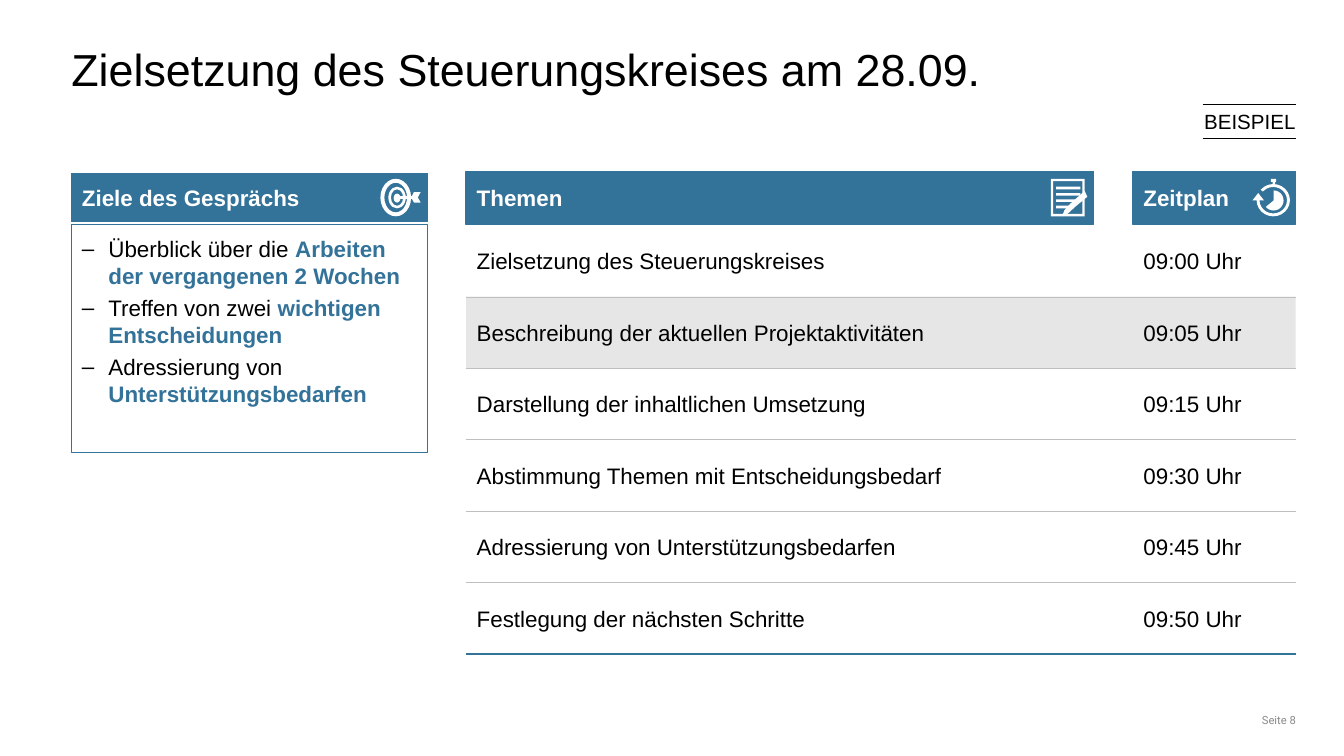
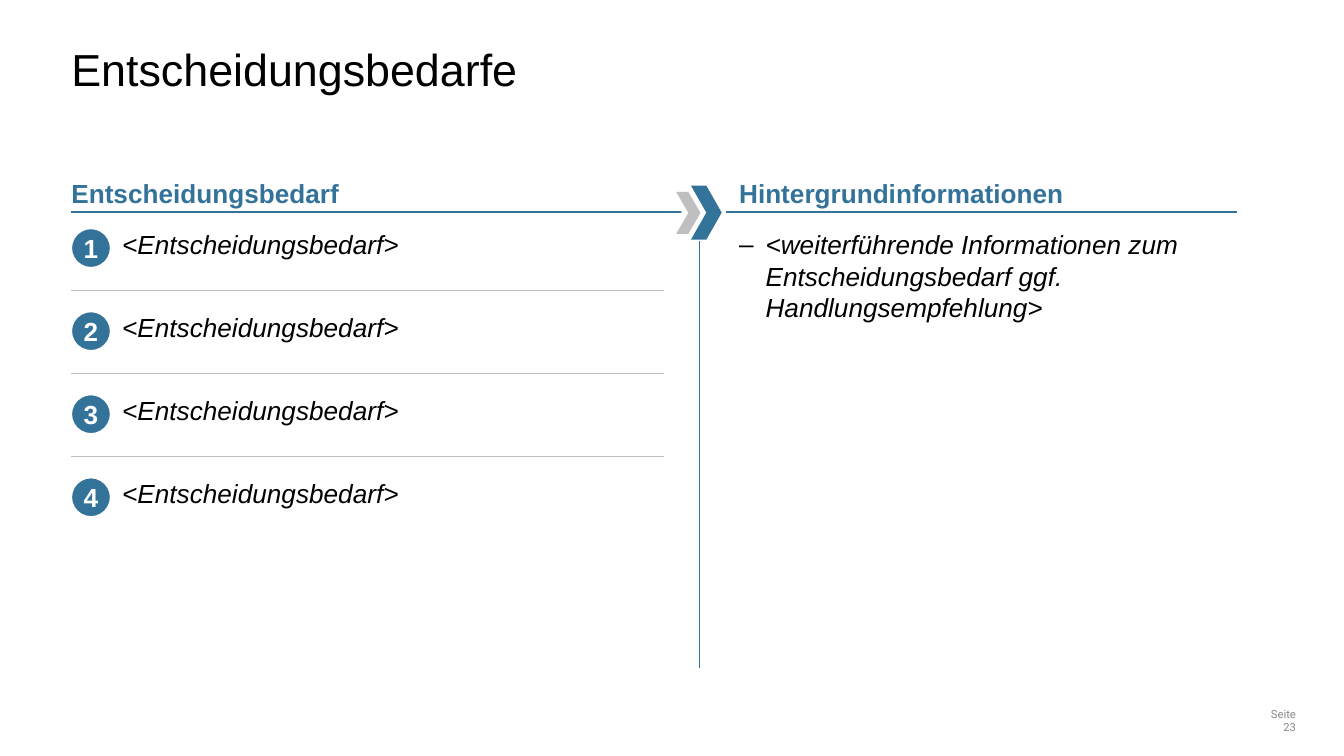
import dataclasses

import lxml.etree
import pptx
import pptx.dml.color
import pptx.enum.shapes
import pptx.enum.text
import pptx.oxml.ns
import pptx.util

Cm = pptx.util.Cm
Pt = pptx.util.Pt
RGB = pptx.dml.color.RGBColor.from_string
SHAPE = pptx.enum.shapes.MSO_SHAPE
ANCHOR = pptx.enum.text.MSO_ANCHOR
ALIGN = pptx.enum.text.PP_ALIGN
qn = pptx.oxml.ns.qn


@dataclasses.dataclass(frozen=True)
class Theme:
    accent: str = "337299"
    black: str = "000000"
    white: str = "FFFFFF"
    rule: str = "BFBFBF"
    band: str = "E6E6E6"
    footer: str = "898989"
    font: str = "Arial"
    footer_font: str = "Roboto"
    title_size: float = 24
    large_size: float = 14
    body_size: float = 12
    tag_size: float = 11
    footer_size: float = 6
    thin: float = 0.25
    medium: float = 0.75


theme = Theme()
LEFT, RIGHT = 1.35, 24.49


def add_box(page, kind, left, top, width, height, text="", fill=None, line=None,
            size=theme.body_size, color=theme.black, bold=False, italic=False,
            font=theme.font, align=ALIGN.LEFT, anchor=ANCHOR.TOP,
            insets=(0, 0), wrap=True, bullet_gap=None):
    """Add a text box (kind None) or a preset shape, with its text."""
    area = Cm(left), Cm(top), Cm(width), Cm(height)
    if kind is None:
        box = page.shapes.add_textbox(*area)
    else:
        box = page.shapes.add_shape(kind, *area)
        box.shadow.inherit = False
        if fill:
            box.fill.solid()
            box.fill.fore_color.rgb = RGB(fill)
        else:
            box.fill.background()
        if line:
            box.line.color.rgb = RGB(line)
            box.line.width = Pt(theme.medium)
        else:
            box.line.fill.background()
    if not text:
        return box

    frame = box.text_frame
    frame.word_wrap = wrap
    frame.vertical_anchor = anchor
    frame.margin_left = frame.margin_right = Cm(insets[0])
    frame.margin_top = frame.margin_bottom = Cm(insets[1])
    frame.text = text
    for index, para in enumerate(frame.paragraphs):
        para.alignment = align
        if bullet_gap is not None:
            properties = para._p.get_or_add_pPr()
            properties.set("marL", str(Cm(0.5)))
            properties.set("indent", str(-Cm(0.5)))
            tint = lxml.etree.SubElement(properties, qn("a:buClr"))
            lxml.etree.SubElement(tint, qn("a:srgbClr"), val=theme.black)
            lxml.etree.SubElement(properties, qn("a:buFont"), typeface=theme.font)
            lxml.etree.SubElement(properties, qn("a:buChar"), char="–")
            if index:
                para.space_before = Pt(bullet_gap)
        for span in para.runs:
            span.font.name = font
            span.font.size = Pt(size)
            span.font.bold = bold
            span.font.italic = italic
            span.font.color.rgb = RGB(color)
    return box


def add_line(page, x1, y1, x2, y2, color, width):
    line = page.shapes.add_connector(
        pptx.enum.shapes.MSO_CONNECTOR.STRAIGHT, Cm(x1), Cm(y1), Cm(x2), Cm(y2))
    line.line.color.rgb = RGB(color)
    line.line.width = Pt(width)
    lxml.etree.SubElement(line._element.spPr, qn("a:effectLst"))


deck = pptx.Presentation()
deck.slide_width, deck.slide_height = Cm(25.4), Cm(14.29)

# Title and page number on every slide
pages = []
for title, number in (("Zielsetzung des Steuerungskreises am 28.09.", 8),
                      ("Entscheidungsbedarfe", 23)):
    page = deck.slides.add_slide(deck.slide_layouts[6])
    add_box(page, None, LEFT, 0.79, RIGHT - LEFT, 1.02, title,
            size=theme.title_size, anchor=ANCHOR.BOTTOM)
    add_box(page, None, RIGHT - 0.73, 13.49, 0.73, 0.25, f"Seite {number}",
            size=theme.footer_size, color=theme.footer, font=theme.footer_font,
            align=ALIGN.RIGHT, anchor=ANCHOR.MIDDLE)
    pages.append(page)
agenda_page, decision_page = pages

# Agenda: rows
TOPIC_LEFT, TOPIC_WIDTH = 8.81, 11.86
TIME_LEFT, TIME_WIDTH = 21.41, 3.08
ROW_TOP, ROW_HEIGHT = 4.26, 1.35
agenda = [
    ("Zielsetzung des Steuerungskreises", "09:00 Uhr"),
    ("Beschreibung der aktuellen Projektaktivitäten", "09:05 Uhr"),
    ("Darstellung der inhaltlichen Umsetzung", "09:15 Uhr"),
    ("Abstimmung Themen mit Entscheidungsbedarf", "09:30 Uhr"),
    ("Adressierung von Unterstützungsbedarfen", "09:45 Uhr"),
    ("Festlegung der nächsten Schritte", "09:50 Uhr"),
]
add_box(agenda_page, SHAPE.RECTANGLE, TOPIC_LEFT, ROW_TOP + ROW_HEIGHT,
        RIGHT - TOPIC_LEFT, ROW_HEIGHT, fill=theme.band)
for index, (topic, time) in enumerate(agenda):
    top = ROW_TOP + index * ROW_HEIGHT
    bottom = top + ROW_HEIGHT
    for text, left, width in ((topic, TOPIC_LEFT, TOPIC_WIDTH),
                              (time, TIME_LEFT, TIME_WIDTH)):
        add_box(agenda_page, None, left, top + 0.42, width, 0.51, text,
                anchor=ANCHOR.MIDDLE, insets=(0.2, 0))
    last = index == len(agenda) - 1
    add_line(agenda_page, TOPIC_LEFT, bottom, RIGHT, bottom,
             theme.accent if last else theme.rule,
             theme.medium if last else theme.thin)

# Agenda: goals
goals = [
    ("Überblick über die ", "Arbeiten der vergangenen 2 Wochen"),
    ("Treffen von zwei ", "wichtigen Entscheidungen"),
    ("Adressierung von ", "Unterstützungsbedarfen"),
]
goal_box = add_box(agenda_page, SHAPE.RECTANGLE, LEFT, 4.24, 6.73, 4.32,
                   "\n".join(plain for plain, strong in goals),
                   fill=theme.white, line=theme.accent, insets=(0.2, 0.2),
                   bullet_gap=3)
for para, (plain, strong) in zip(goal_box.text_frame.paragraphs, goals):
    span = para.add_run()
    span.text = strong
    span.font.name = theme.font
    span.font.size = Pt(theme.body_size)
    span.font.bold = True
    span.font.color.rgb = RGB(theme.accent)

# Agenda: column headers
for text, left, top, width, height in (
        ("Ziele des Gesprächs", LEFT, 3.28, 6.73, 0.91),
        ("Themen", TOPIC_LEFT, 3.24, TOPIC_WIDTH, 1),
        ("Zeitplan", TIME_LEFT, 3.24, TIME_WIDTH, 1)):
    add_box(agenda_page, SHAPE.RECTANGLE, left, top, width, height, text,
            fill=theme.accent, line=theme.accent, color=theme.white, bold=True,
            anchor=ANCHOR.MIDDLE, insets=(0.2, 0.2))

# Agenda: target, notepad and stopwatch icons
icon_parts = [
    (SHAPE.DONUT, 7.19, 3.38, 0.58, 0.71, [0.13], 0),
    (SHAPE.DONUT, 7.34, 3.53, 0.33, 0.41, [0.15], 0),
    (SHAPE.OVAL, 7.44, 3.66, 0.13, 0.17, [], 0),
    (SHAPE.RECTANGLE, 7.5, 3.71, 0.32, 0.05, [], 0),
    (SHAPE.CHEVRON, 7.77, 3.63, 0.18, 0.2, [0.3], 180),
    (SHAPE.FRAME, 19.86, 3.38, 0.64, 0.71, [0.07], 0),
    (SHAPE.BLOCK_ARC, 23.75, 3.48, 0.63, 0.61, [132, 108, 0.09], 0),
    (SHAPE.PIE, 23.88, 3.6, 0.38, 0.38, [162, 84], 0),
    (SHAPE.RECTANGLE, 24.02, 3.38, 0.1, 0.06, [], 0),
    (SHAPE.RECTANGLE, 24.05, 3.43, 0.05, 0.07, [], 0),
    (SHAPE.ISOSCELES_TRIANGLE, 23.67, 3.65, 0.22, 0.14, [], 0),
]
for kind, left, top, width, height, adjustments, turn in icon_parts:
    part = add_box(agenda_page, kind, left, top, width, height, fill=theme.white)
    part.rotation = turn
    for index, value in enumerate(adjustments):
        part.adjustments[index] = value
for index, length in enumerate((0.46, 0.46, 0.39, 0.33)):
    add_box(agenda_page, SHAPE.RECTANGLE, 19.96, 3.53 + index * 0.12,
            length, 0.05, fill=theme.white)
pencil_points = [(20.07, 4.09), (20.12, 3.97), (20.24, 3.84), (20.5, 3.61),
                 (20.55, 3.72), (20.32, 3.91), (20.18, 4.04)]
builder = agenda_page.shapes.build_freeform(
    Cm(pencil_points[0][0]), Cm(pencil_points[0][1]))
builder.add_line_segments([(Cm(x), Cm(y)) for x, y in pencil_points[1:]])
pencil = builder.convert_to_shape()
pencil.shadow.inherit = False
pencil.fill.solid()
pencil.fill.fore_color.rgb = RGB(theme.white)
pencil.line.fill.background()

# Agenda: example tag
TAG_LEFT, TAG_TOP, TAG_HEIGHT = 22.73, 1.98, 0.64
add_box(agenda_page, None, TAG_LEFT, TAG_TOP, RIGHT - TAG_LEFT, TAG_HEIGHT,
        "BEISPIEL", size=theme.tag_size, align=ALIGN.RIGHT,
        anchor=ANCHOR.MIDDLE, wrap=False)
for y in (TAG_TOP, TAG_TOP + TAG_HEIGHT):
    add_line(agenda_page, TAG_LEFT, y, RIGHT, y, theme.black, theme.medium)

# Decisions: column headings
INFO_LEFT = 13.97
for text, left, width in (("Entscheidungsbedarf", LEFT, 11.2),
                          ("Hintergrundinformationen", INFO_LEFT, 10.52)):
    add_box(decision_page, None, left, 3.25, width, 0.69, text,
            size=theme.large_size, color=theme.accent, bold=True,
            anchor=ANCHOR.BOTTOM)

# Decisions: numbered list
ITEM_TOP, ITEM_PITCH, ITEM_COUNT = 4.32, 1.57, 4
for index in range(ITEM_COUNT):
    top = ITEM_TOP + index * ITEM_PITCH
    add_box(decision_page, SHAPE.OVAL, LEFT, top, 0.74, 0.74, str(index + 1),
            fill=theme.accent, line=theme.white, size=theme.large_size,
            color=theme.white, bold=True, align=ALIGN.CENTER,
            anchor=ANCHOR.MIDDLE, wrap=False)
    add_box(decision_page, None, 2.31, top, 10.24, 0.61, "<Entscheidungsbedarf>",
            size=theme.large_size, italic=True)
    if index < ITEM_COUNT - 1:
        add_line(decision_page, LEFT, top + 1.17, 12.55, top + 1.17,
                 theme.rule, theme.thin)

# Decisions: background information
add_box(decision_page, None, INFO_LEFT, 4.32, 10.52, 1.8,
        "<weiterführende Informationen zum Entscheidungsbedarf ggf. "
        "Handlungsempfehlung>",
        size=theme.large_size, italic=True, bullet_gap=6)

# Decisions: dividers and chevrons
add_line(decision_page, LEFT, 4.01, 23.37, 4.01, theme.accent, theme.medium)
for kind, left, top, width, height, fill in (
        (SHAPE.RECTANGLE, 12.88, 3.28, 0.84, 1.45, theme.white),
        (SHAPE.CHEVRON, 12.78, 3.63, 0.46, 0.79, theme.rule),
        (SHAPE.CHEVRON, 13.06, 3.51, 0.58, 1.02, theme.accent)):
    add_box(decision_page, kind, left, top, width, height, fill=fill)
add_line(decision_page, 13.21, 4.55, 13.21, 12.62, theme.accent, theme.thin)

deck.save("out.pptx")
